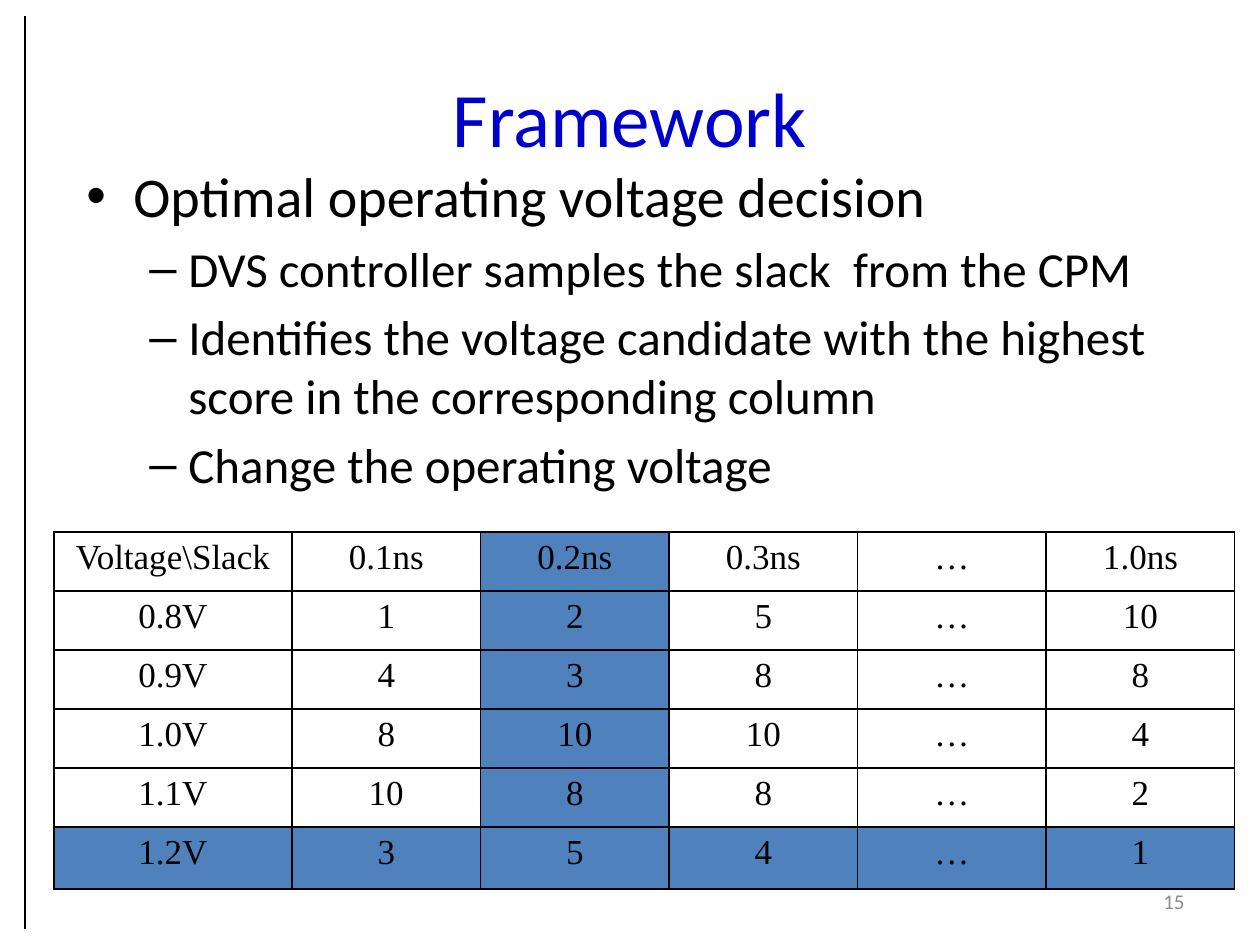
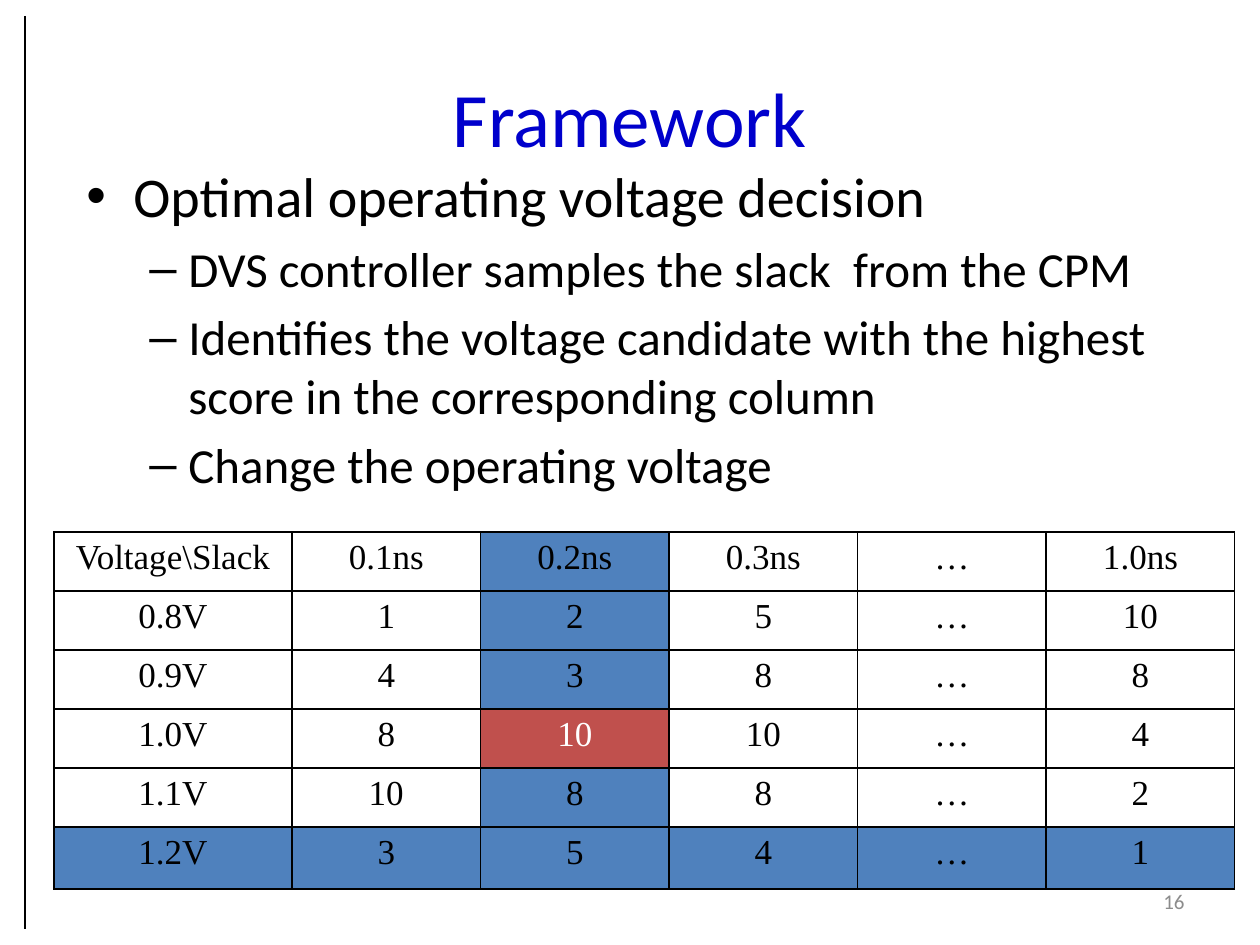
import pptx
import pptx.dml.color
import pptx.enum.shapes
import pptx.enum.text
import pptx.oxml
import pptx.oxml.ns
import pptx.util
from lxml import etree

RGB = pptx.dml.color.RGBColor
BLACK = RGB(0x00, 0x00, 0x00)
WHITE = RGB(0xFF, 0xFF, 0xFF)
TITLE_BLUE = RGB(0x00, 0x00, 0xCC)
GREY = RGB(0x8C, 0x8C, 0x8C)
BLUE = RGB(0x4F, 0x81, 0xBD)
RED = RGB(0xC0, 0x50, 0x4D)

ALIGN = pptx.enum.text.PP_ALIGN
MIDDLE = pptx.enum.text.MSO_ANCHOR.MIDDLE
qn = pptx.oxml.ns.qn

# Bullet levels: mark, size in points, left margin and hanging indent in px
LEVELS = [("•", 32, 47, 47), ("–", 28, 102, 39)]

BULLETS = [
    (0, "Optimal operating voltage decision"),
    (1, "DVS controller samples the slack  from the CPM"),
    (1, "Identifies the voltage candidate with the highest score "
        "in the corresponding column"),
    (1, "Change the operating voltage"),
]

SCORES = [
    ["Voltage\\Slack", "0.1ns", "0.2ns", "0.3ns", "…", "1.0ns"],
    ["0.8V", "1", "2", "5", "…", "10"],
    ["0.9V", "4", "3", "8", "…", "8"],
    ["1.0V", "8", "10", "10", "…", "4"],
    ["1.1V", "10", "8", "8", "…", "2"],
    ["1.2V", "3", "5", "4", "…", "1"],
]
SLACK_COL, VOLTAGE_ROW = 2, 5
BEST_CELL = (3, 2)


def px(n):
    return pptx.util.Emu(round(n * 914400 / 126))


class Deck:
    def __init__(self):
        self.prs = pptx.Presentation()
        self.prs.slide_width, self.prs.slide_height = px(1260), px(945)
        self.slide = None

    def add_slide(self, title):
        self.slide = self.prs.slides.add_slide(self.prs.slide_layouts[5])
        self.line(25, 16, 25, 929)
        sp = self.slide.shapes.title
        sp.left, sp.top, sp.width, sp.height = map(px, (63, 38, 1134, 158))
        sp.text_frame.text = title
        sp.text_frame.vertical_anchor = MIDDLE
        self.style(sp.text_frame.paragraphs[0], 44, TITLE_BLUE, ALIGN.CENTER)

    def style(self, p, size, color, align, font="Calibri"):
        p.font.size, p.font.name = pptx.util.Pt(size), font
        p.font.color.rgb = color
        p.alignment = align

    def line(self, x1, y1, x2, y2):
        cxn = self.slide.shapes.add_connector(
            pptx.enum.shapes.MSO_CONNECTOR.STRAIGHT, *map(px, (x1, y1, x2, y2)))
        cxn.line.color.rgb = BLACK
        cxn.line.width = pptx.util.Pt(0.75)
        etree.SubElement(cxn.element.spPr, qn("a:effectLst"))

    def text_box(self, x, y, w, h):
        tf = self.slide.shapes.add_textbox(*map(px, (x, y, w, h))).text_frame
        tf.word_wrap = True
        return tf

    def bullets(self, x, y, w, h, items):
        tf = self.text_box(x, y, w, h)
        for i, (level, text) in enumerate(items):
            mark, size, margin, hang = LEVELS[level]
            p = tf.add_paragraph() if i else tf.paragraphs[0]
            p.text, p.level = text, level
            p.space_before = pptx.util.Pt(size * 0.2)
            self.style(p, size, BLACK, ALIGN.LEFT)
            pPr = p._p.get_or_add_pPr()
            pPr.set("marL", str(px(margin)))
            pPr.set("indent", str(-px(hang)))
            bu_font = pptx.oxml.parse_xml(
                f'<a:buFont {pptx.oxml.ns.nsdecls("a")} typeface="Arial"/>')
            bu_char = pptx.oxml.parse_xml(
                f'<a:buChar {pptx.oxml.ns.nsdecls("a")} char="{mark}"/>')
            # Bullet marks come before the default run properties
            pPr.find(qn("a:defRPr")).addprevious(bu_font)
            bu_font.addnext(bu_char)

    def page_number(self, number):
        tf = self.text_box(903, 876, 294, 50)
        tf.vertical_anchor = MIDDLE
        p = tf.paragraphs[0]
        p.text = str(number)
        self.style(p, 12, GREY, ALIGN.RIGHT)

    def borders(self, cell):
        tcPr = cell._tc.get_or_add_tcPr()
        for side in "LRTB":
            ln = etree.SubElement(tcPr, qn(f"a:ln{side}"),
                                  w=str(pptx.util.Pt(1)))
            fill = etree.SubElement(ln, qn("a:solidFill"))
            etree.SubElement(fill, qn("a:srgbClr"), val=str(BLACK))

    def score_table(self, x, y, w, h, best=None):
        n_rows, n_cols = len(SCORES), len(SCORES[0])
        table = self.slide.shapes.add_table(
            n_rows, n_cols, *map(px, (x, y, w, h))).table
        table.first_row = table.horz_banding = False
        head_w, row_h = 238, 59
        for c, col in enumerate(table.columns):
            col.width = px((w - head_w) / (n_cols - 1) if c else head_w)
        for row in table.rows:
            row.height = px(row_h)
        table.rows[n_rows - 1].height = px(h - row_h * (n_rows - 1))
        for r, values in enumerate(SCORES):
            for c, value in enumerate(values):
                cell = table.cell(r, c)
                self.borders(cell)
                is_best = (r, c) == best
                if is_best or c == SLACK_COL or r == VOLTAGE_ROW:
                    cell.fill.solid()
                    cell.fill.fore_color.rgb = RED if is_best else BLUE
                else:
                    cell.fill.background()
                cell.text = value
                self.style(cell.text_frame.paragraphs[0], 20,
                           WHITE if is_best else BLACK, ALIGN.CENTER,
                           "Times New Roman")


def main():
    deck = Deck()
    # The second slide marks the best score in the sampled column
    for number, best in [(15, None), (16, BEST_CELL)]:
        deck.add_slide("Framework")
        deck.bullets(74, 155, 1111, 672, BULLETS)
        deck.page_number(number)
        deck.score_table(54, 532, 1181, 357, best)
    deck.prs.save("out.pptx")


if __name__ == "__main__":
    main()
